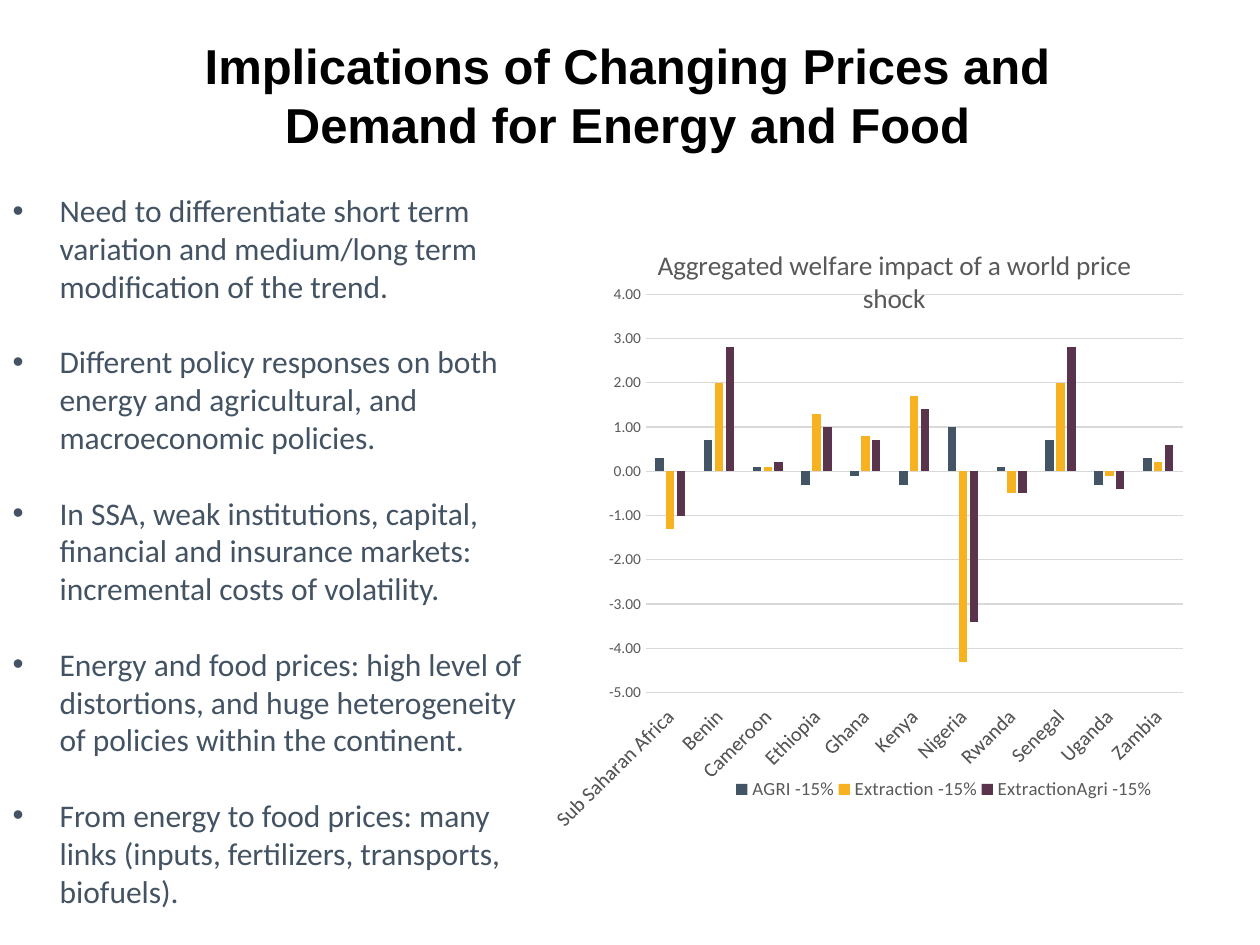
from dataclasses import dataclass
from typing import Any

from pptx import Presentation
from pptx.chart import data
from pptx.dml.color import RGBColor
from pptx.enum import chart as ce
from pptx.enum import text
from pptx.oxml import ns, xmlchemy
from pptx.util import Emu, Pt

INK = RGBColor(0x43, 0x53, 0x63)
BLACK = RGBColor(0, 0, 0)
GRAY = RGBColor(0x59, 0x59, 0x59)
RULE = RGBColor(0xD9, 0xD9, 0xD9)
SLATE = RGBColor(0x43, 0x54, 0x64)
GOLD = RGBColor(0xF6, 0xB2, 0x21)
PLUM = RGBColor(0x5A, 0x34, 0x4D)
SCALE = 914400 / 126


@dataclass
class Box:
    x: int
    y: int
    w: int
    h: int


@dataclass
class Bars:
    name: str
    color: RGBColor
    vals: tuple[float, ...]


HEAD = "Implications of Changing Prices and Demand for Energy and Food"
POINTS = (
    "Need to differentiate short term variation and medium/long term modification of the trend.",
    "Different policy responses on both energy and agricultural, and macroeconomic policies.",
    "In SSA, weak institutions, capital, financial and insurance markets: incremental costs of volatility.",
    "Energy and food prices: high level of distortions, and huge heterogeneity of policies within the continent.",
    "From energy to food prices: many links (inputs, fertilizers, transports, biofuels).",
)
CAPTION = "Aggregated welfare impact of a world price shock"
LANDS = ("Sub Saharan Africa", "Benin", "Cameroon", "Ethiopia", "Ghana", "Kenya",
         "Nigeria", "Rwanda", "Senegal", "Uganda", "Zambia")
SETS = (
    Bars("AGRI -15%", SLATE, (0.3, 0.7, 0.1, -0.3, -0.1, -0.3, 1, 0.1, 0.7, -0.3, 0.3)),
    Bars("Extraction -15%", GOLD, (-1.3, 2, 0.1, 1.3, 0.8, 1.7, -4.3, -0.5, 2, -0.1, 0.2)),
    Bars("ExtractionAgri -15%", PLUM, (-1, 2.8, 0.2, 1, 0.7, 1.4, -3.4, -0.5, 2.8, -0.4, 0.6)),
)


def px(n: int) -> Emu:
    return Emu(round(n * SCALE))


def place(item: Any, box: Box) -> None:
    item.left, item.top = px(box.x), px(box.y)
    item.width, item.height = px(box.w), px(box.h)


def style(font: Any, size: int, color: RGBColor, face: str = "Calibri", bold: bool = False) -> None:
    font.size, font.name, font.bold = Pt(size), face, bold
    font.color.rgb = color


def draw_head(item: Any) -> None:
    place(item, Box(114, 26, 1027, 137))
    frame = item.text_frame
    frame.auto_size = text.MSO_AUTO_SIZE.NONE
    frame.vertical_anchor = text.MSO_ANCHOR.MIDDLE
    frame.margin_top = frame.margin_bottom = px(3)
    para = frame.paragraphs[0]
    para.alignment = text.PP_ALIGN.CENTER
    run = para.add_run()
    run.text = HEAD
    style(run.font, 28, BLACK, "Arial", True)


def draw_list(item: Any) -> None:
    place(item, Box(0, 185, 551, 684))
    frame = item.text_frame
    frame.auto_size = text.MSO_AUTO_SIZE.NONE
    for i, point in enumerate(POINTS):
        para = frame.add_paragraph() if i else frame.paragraphs[0]
        para.line_spacing = Pt(21.6)
        para.space_before = Pt(21.6 if i else 0)
        props = para._p.get_or_add_pPr()
        props.set("marL", str(px(47)))
        props.set("indent", str(-px(47)))
        run = para.add_run()
        run.text = point
        style(run.font, 18, INK)


def lay(node: Any, slot: int, inner: bool = False, **frac: float) -> None:
    old = node.find(ns.qn("c:layout"))
    if old is not None:
        node.remove(old)
    top = xmlchemy.OxmlElement("c:layout")
    node.insert(slot, top)
    form = xmlchemy.OxmlElement("c:manualLayout")
    top.append(form)
    vals: dict[str, Any] = {"layoutTarget": "inner"} if inner else {}
    vals |= {f"{key}Mode": "edge" for key in frac if key in "xy"}
    for key, val in (vals | frac).items():
        leaf = xmlchemy.OxmlElement(f"c:{key}")
        leaf.set("val", str(val))
        form.append(leaf)


def draw_chart(slide: Any, box: Box) -> None:
    info = data.CategoryChartData(number_format="0.00")
    info.categories = LANDS
    for bars in SETS:
        info.add_series(bars.name, bars.vals)
    chart = slide.shapes.add_chart(
        ce.XL_CHART_TYPE.COLUMN_CLUSTERED,
        px(box.x), px(box.y), px(box.w), px(box.h), info).chart
    style(chart.font, 10, BLACK)

    title = chart.chart_title
    run = title.text_frame.paragraphs[0].add_run()
    run.text = CAPTION
    style(run.font, 16, GRAY)
    lay(title._element, 1, x=0.13, y=0.03)

    plot = chart.plots[0]
    plot.gap_width, plot.overlap, plot.vary_by_categories = 219, -27, False
    for part, bars in zip(plot.series, SETS):
        part.format.fill.solid()
        part.format.fill.fore_color.rgb = bars.color
        part.invert_if_negative = False
    lay(chart._chartSpace.chart.plotArea, 0, True, x=0.12, y=0.12, w=0.81, h=0.68)

    cat, val = chart.category_axis, chart.value_axis
    for axis, size in ((cat, 12), (val, 9)):
        axis.major_tick_mark = axis.minor_tick_mark = ce.XL_TICK_MARK.NONE
        style(axis.tick_labels.font, size, GRAY)
    cat.tick_label_position = ce.XL_TICK_LABEL_POSITION.LOW
    cat._element.find(ns.qn("c:txPr")).find(ns.qn("a:bodyPr")).set("rot", "-2700000")
    val.minimum_scale, val.maximum_scale, val.major_unit = -5, 4, 1
    val.tick_labels.number_format = "0.00"
    val.tick_labels.number_format_is_linked = False
    val.format.line.fill.background()
    for line in (cat.format.line, val.major_gridlines.format.line):
        line.color.rgb, line.width = RULE, Pt(0.75)

    chart.has_legend = True
    key = chart.legend
    key.position = ce.XL_LEGEND_POSITION.RIGHT
    key.include_in_layout = False
    style(key.font, 11, GRAY)
    lay(key._element, 1, x=0.25, y=0.94, w=0.64, h=0.05)


def main() -> None:
    deck = Presentation()
    deck.slide_width, deck.slide_height = px(1260), px(945)
    slide = deck.slides.add_slide(deck.slide_layouts[1])
    draw_list(slide.placeholders[1])
    draw_head(slide.shapes.title)
    draw_chart(slide, Box(551, 224, 678, 607))
    deck.save("out.pptx")


if __name__ == "__main__":
    main()
